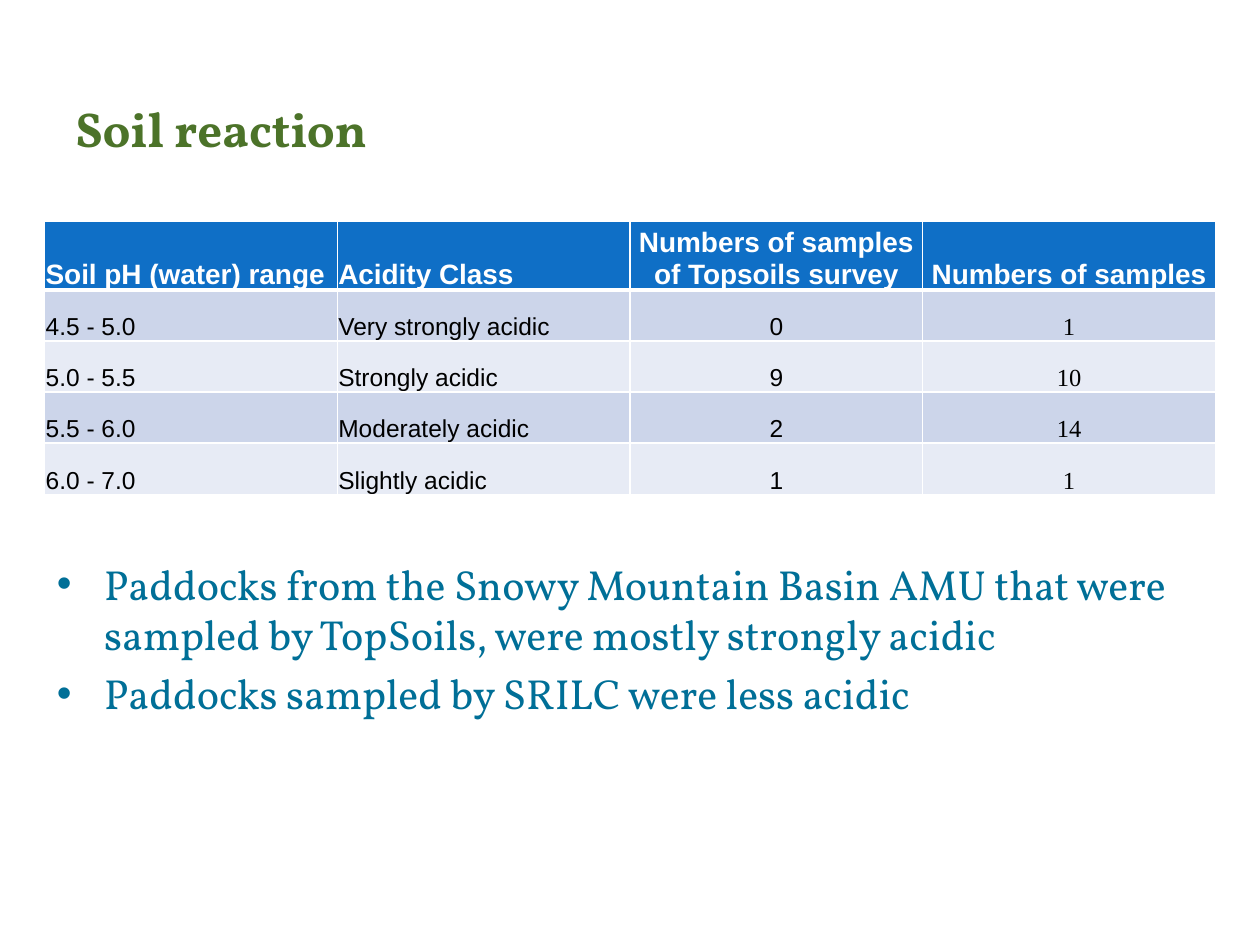
from lxml.etree import SubElement
from pptx import Presentation
from pptx.dml.color import RGBColor
from pptx.enum.text import MSO_ANCHOR as Anchor, PP_ALIGN as Align
from pptx.oxml.ns import qn
from pptx.util import Cm, Pt

WHITE = RGBColor(0xFF, 0xFF, 0xFF)
BLACK = RGBColor(0, 0, 0)
GREEN = RGBColor(0x4C, 0x73, 0x29)
TEAL = RGBColor(0x00, 0x6F, 0x97)
HEADER_BLUE = RGBColor(0x0F, 0x6F, 0xC6)
BANDS = [RGBColor(0xCC, 0xD5, 0xEA), RGBColor(0xE7, 0xEB, 0xF5)]

ROWS = [
    ["Soil pH (water) range", "Acidity Class",
     "Numbers of samples of Topsoils survey", "Numbers of samples"],
    ["4.5 - 5.0", "Very strongly acidic", "0", "1"],
    ["5.0 - 5.5", "Strongly acidic", "9", "10"],
    ["5.5 - 6.0", "Moderately acidic", "2", "14"],
    ["6.0 - 7.0", "Slightly acidic", "1", "1"],
]
FINDINGS = [
    "Paddocks from the Snowy Mountain Basin AMU that were sampled by TopSoils, "
    "were mostly strongly acidic",
    "Paddocks sampled by SRILC were less acidic",
]


def set_font(p, name, size, color, bold=False):
    p.font.name = name
    p.font.size = Pt(size)
    p.font.color.rgb = color
    p.font.bold = bold


def add_text_frame(slide, left, top, width, height):
    box = slide.shapes.add_textbox(Cm(left), Cm(top), Cm(width), Cm(height))
    box.text_frame.word_wrap = True
    return box.text_frame


def add_title(slide, text):
    tf = add_text_frame(slide, 1.27, 1.22, 22.86, 2.72)
    tf.vertical_anchor = Anchor.MIDDLE
    p = tf.paragraphs[0]
    p.text = text
    set_font(p, "Vollkorn", 28, GREEN, bold=True)


def set_borders(cell, top, bottom):
    tc_pr = cell._tc.get_or_add_tcPr()
    for side, width in (("L", 1), ("R", 1), ("T", top), ("B", bottom)):
        ln = SubElement(tc_pr, qn(f"a:ln{side}"), w=str(Pt(width)))
        fill = SubElement(ln, qn("a:solidFill"))
        SubElement(fill, qn("a:srgbClr"), val=str(WHITE))


def format_cell(cell, text, row, col):
    header = row == 0
    set_borders(cell, top=3 if row == 1 else 1, bottom=3 if header else 1)
    cell.fill.solid()
    cell.fill.fore_color.rgb = HEADER_BLUE if header else BANDS[(row - 1) % 2]
    cell.margin_left = cell.margin_right = cell.margin_top = Cm(0.02)
    cell.margin_bottom = 0
    cell.vertical_anchor = Anchor.BOTTOM
    p = cell.text_frame.paragraphs[0]
    p.text = text
    p.alignment = Align.CENTER if col >= 2 else Align.LEFT
    if header:
        set_font(p, "Arial", 16, WHITE, bold=True)
    else:
        set_font(p, "Times New Roman" if col == 3 else "Arial", 14, BLACK)


def add_sample_table(slide, rows):
    frame = slide.shapes.add_table(len(rows), len(rows[0]),
                                   Cm(0.9), Cm(4.47), Cm(23.6), Cm(5.37))
    table = frame.table
    for column in table.columns:
        column.width = Cm(5.9)
    for i, values in enumerate(rows):
        table.rows[i].height = Cm(1.25 if i == 0 else 1.03)
        for j, text in enumerate(values):
            format_cell(table.cell(i, j), text, i, j)


def add_bullets(slide, items):
    tf = add_text_frame(slide, 0.9, 11.13, 23.4, 5.56)
    for i, text in enumerate(items):
        p = tf.add_paragraph() if i else tf.paragraphs[0]
        p.text = text
        p_pr = p._p.get_or_add_pPr()
        p_pr.set("marL", str(Cm(0.95)))
        p_pr.set("indent", str(-Cm(0.95)))
        SubElement(p_pr, qn("a:buFont"), typeface="Arial")
        SubElement(p_pr, qn("a:buChar"), char="•")
        if i:
            p.space_before = Pt(4.8)
        set_font(p, "Vollkorn", 24, TEAL)


def main():
    prs = Presentation()
    prs.slide_width, prs.slide_height = Cm(25.4), Cm(19.05)
    slide = prs.slides.add_slide(prs.slide_layouts[6])
    add_title(slide, "Soil reaction")
    add_sample_table(slide, ROWS)
    add_bullets(slide, FINDINGS)
    prs.save("out.pptx")


if __name__ == "__main__":
    main()
